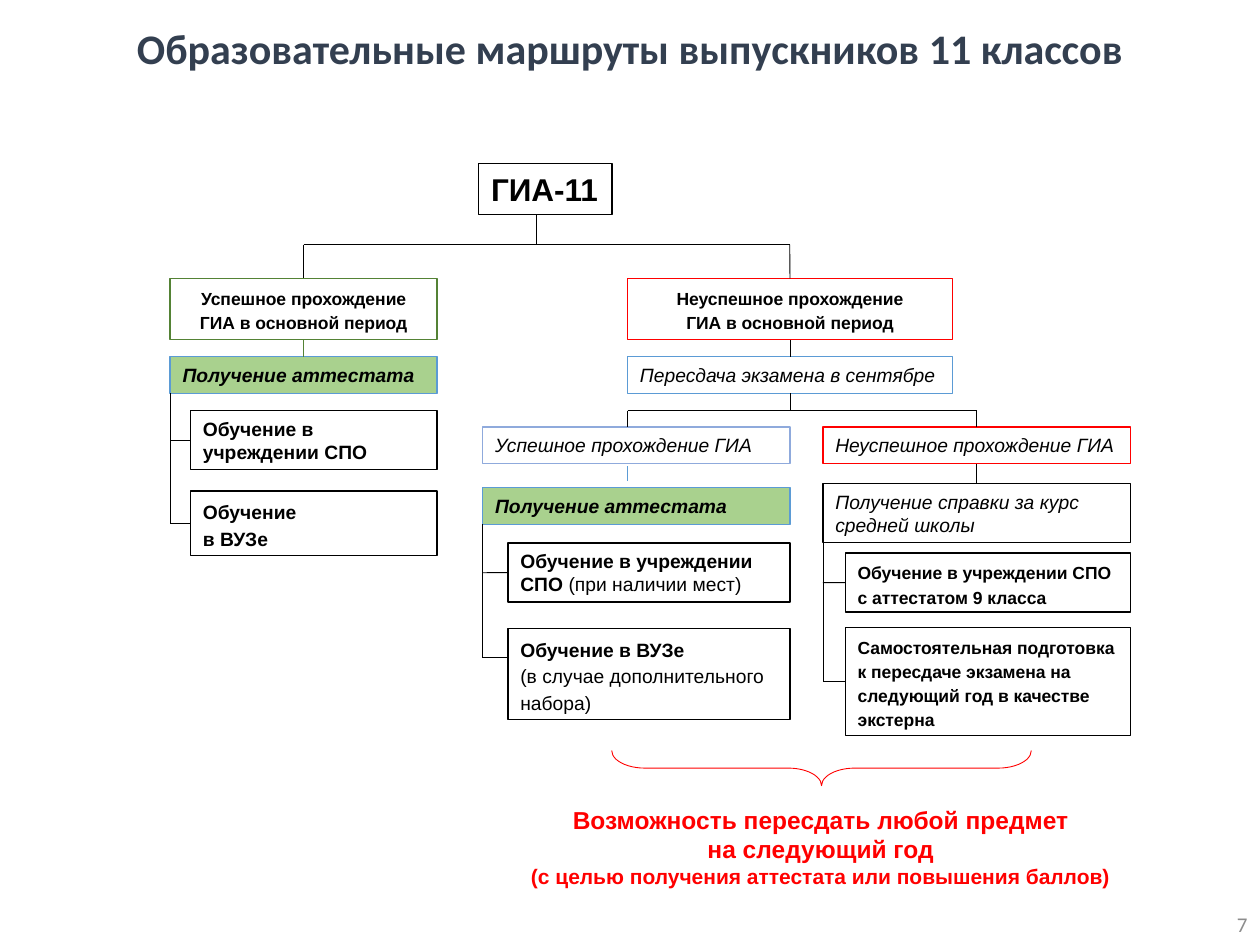
from dataclasses import dataclass

from lxml.etree import SubElement
from pptx import Presentation
from pptx.dml.color import RGBColor
from pptx.enum.shapes import MSO_CONNECTOR as Connector, MSO_SHAPE as Preset
from pptx.enum.text import MSO_ANCHOR as Anchor, MSO_AUTO_SIZE as AutoSize, PP_ALIGN as Align
from pptx.oxml.ns import qn
from pptx.util import Cm, Pt

BLACK = RGBColor(0x00, 0x00, 0x00)
RED = RGBColor(0xFF, 0x00, 0x00)
GREEN = RGBColor(0x54, 0x82, 0x35)
LIGHT_GREEN = RGBColor(0xA9, 0xD1, 0x8E)
BLUE = RGBColor(0x5B, 0x9B, 0xD5)
PALE_BLUE = RGBColor(0x8F, 0xAA, 0xDC)
SLATE = RGBColor(0x33, 0x3F, 0x50)
GREY = RGBColor(0x8C, 0x8C, 0x8C)

TOP, LEFT, BOTTOM = 0, 1, 2  # connection sites of a rectangle
HEAD_HEIGHT = 1.24
ROW_HEIGHT = 0.74
TWO_LINES = 1.19


@dataclass
class Box:
    """An area of the slide, in centimetres."""
    left: float
    top: float
    width: float
    height: float

    @property
    def center(self):
        return self.left + self.width / 2

    @property
    def middle(self):
        return self.top + self.height / 2

    @property
    def right(self):
        return self.left + self.width

    @property
    def bottom(self):
        return self.top + self.height

    def inner(self, dx, dy, width, height):
        return Box(self.left + dx, self.top + dy, width, height)

    def lengths(self):
        return Cm(self.left), Cm(self.top), Cm(self.width), Cm(self.height)


def write(shape, text, size, color=BLACK, font="Arial", bold=False, italic=False,
          align=Align.LEFT, spacing=None, anchor=Anchor.TOP, wrap=True):
    frame = shape.text_frame
    frame.text = text
    frame.word_wrap = wrap
    frame.vertical_anchor = anchor
    for para in frame.paragraphs:
        para.alignment = align
        if spacing:
            para.line_spacing = spacing
        for span in para.runs:
            span.font.name, span.font.size = font, Pt(size)
            span.font.bold, span.font.italic = bold, italic
            span.font.color.rgb = color


def add_node(page, box, text, line=BLACK, fill=None, size=11, **style):
    node = page.shapes.add_shape(Preset.RECTANGLE, *box.lengths())
    node.shadow.inherit = False
    node.line.color.rgb, node.line.width = line, Pt(0.75)
    if fill is None:
        node.fill.background()
    else:
        node.fill.solid()
        node.fill.fore_color.rgb = fill
    write(node, text, size, **style)
    node.text_frame.auto_size = AutoSize.SHAPE_TO_FIT_TEXT
    return node


def add_line(page, x1, y1, x2, y2, color=BLACK):
    line = page.shapes.add_connector(Connector.STRAIGHT, Cm(x1), Cm(y1), Cm(x2), Cm(y2))
    line.line.color.rgb, line.line.width = color, Pt(0.5)
    SubElement(line._element.spPr, qn("a:effectLst"))
    return line


def link(page, upper, lower, color=BLACK):
    """Join the bottom of one node to the top of the next."""
    line = add_line(page, 0, 0, 0, 0, color)
    line.begin_connect(upper, BOTTOM)
    line.end_connect(lower, TOP)


def add_spine(page, parent, children, last_tick=None):
    """Draw the line down from a parent's left corner with a tick to each child."""
    ticks = [box.middle for _, box in children]
    if last_tick is not None:
        ticks[-1] = last_tick
    add_line(page, parent.left, parent.bottom, parent.left, ticks[-1])
    for (node, box), y in zip(children, ticks):
        tick = add_line(page, box.left, y, parent.left, y)
        if y == box.middle:
            tick.begin_connect(node, LEFT)


def add_title(page, box):
    title = page.shapes.title
    title.left, title.top, title.width, title.height = box.lengths()
    write(title, "Образовательные маршруты выпускников 11 классов", 24, SLATE, "Calibri",
          bold=True, align=Align.CENTER, spacing=1.07)
    title.text_frame.auto_size = AutoSize.NONE


def add_root(page, box, success, failure):
    """Place the exam node and fork it to the two outcomes."""
    exam = box.inner(3.53, 0, 2.69, 1.02)
    add_node(page, exam, "ГИА-11", size=18, bold=True, wrap=False)
    bus = box.top + 1.63
    stem = box.left + 4.7
    add_line(page, box.left, bus, box.right, bus)
    add_line(page, stem, exam.bottom, stem, bus)
    for node, x in ((success, box.left), (failure, box.right)):
        add_line(page, x, bus, x, box.bottom).end_connect(node, TOP)


def add_main_success(page, box):
    head = add_node(page, box.inner(0, 0, box.width, HEAD_HEIGHT),
                    "Успешное прохождение ГИА в основной период", GREEN, size=10,
                    bold=True, align=Align.CENTER, spacing=1.15)
    certificate_box = box.inner(0, 1.58, box.width, ROW_HEIGHT)
    certificate = add_node(page, certificate_box, "Получение аттестата", BLUE, LIGHT_GREEN,
                           bold=True, italic=True)
    link(page, head, certificate, GREEN)
    college_box = box.inner(0.41, 2.67, box.width - 0.41, TWO_LINES)
    college = add_node(page, college_box, "Обучение в учреждении СПО", bold=True)
    university_box = box.inner(0.41, 4.29, box.width - 0.41, 1.3)
    university = add_node(page, university_box, "Обучение\nв ВУЗе", bold=True, spacing=1.15)
    add_spine(page, certificate_box, [(college, college_box), (university, university_box)])
    return head


def add_main_failure(page, box, resit_failure):
    """Place the failure and resit nodes and fork them to the resit outcomes."""
    head = add_node(page, box.inner(0, 0, box.width, HEAD_HEIGHT),
                    "Неуспешное прохождение\nГИА в основной период", RED, size=10,
                    bold=True, align=Align.CENTER, spacing=1.15)
    resit_box = box.inner(0, 1.58, box.width, ROW_HEIGHT)
    resit = add_node(page, resit_box, "Пересдача экзамена в сентябре", BLUE,
                     italic=True, wrap=False)
    link(page, head, resit)
    bus, fork_right = box.top + 2.67, box.left + 7.04
    add_line(page, box.left, bus, fork_right, bus)
    add_line(page, box.center, resit_box.bottom, box.center, bus).begin_connect(resit, BOTTOM)
    add_line(page, box.left, bus, box.left, box.bottom)
    add_line(page, fork_right, bus, fork_right, box.bottom).end_connect(resit_failure, TOP)
    return head


def add_resit_success(page, box):
    add_node(page, box.inner(0, 0, box.width, ROW_HEIGHT), "Успешное прохождение ГИА",
             PALE_BLUE, italic=True)
    certificate_box = box.inner(0, 1.22, box.width, ROW_HEIGHT)
    add_node(page, certificate_box, "Получение аттестата", BLUE, LIGHT_GREEN,
             bold=True, italic=True)
    stem = box.left + 2.92
    add_line(page, stem, box.top + 0.79, stem, box.top + 1.09, BLUE)
    college_box = box.inner(0.51, 2.34, box.width - 0.51, TWO_LINES)
    college = add_node(page, college_box, "Обучение в учреждении СПО ", bold=True)
    note = college.text_frame.paragraphs[0].add_run()
    note.text = "(при наличии мест)"
    note.font.name, note.font.size = "Arial", Pt(11)
    note.font.color.rgb = BLACK
    university_box = box.inner(0.51, 4.06, box.width - 0.51, 1.83)
    university = add_node(page, university_box,
                          "Обучение в ВУЗе\n(в случае дополнительного набора)",
                          bold=True, spacing=1.15)
    university.text_frame.paragraphs[1].runs[0].font.bold = False
    add_spine(page, certificate_box, [(college, college_box), (university, university_box)],
              last_tick=box.top + 4.65)


def add_resit_failure(page, box):
    head = add_node(page, box.inner(0, 0, box.width, ROW_HEIGHT), "Неуспешное прохождение ГИА",
                    RED, italic=True, wrap=False)
    record_box = box.inner(0, 1.14, box.width, TWO_LINES)
    record = add_node(page, record_box, "Получение справки за курс средней школы", italic=True)
    link(page, head, record)
    college_box = box.inner(0.45, 2.54, box.width - 0.45, TWO_LINES)
    college = add_node(page, college_box, "Обучение в учреждении СПО\nс аттестатом 9 класса",
                       size=10, bold=True, spacing=1.15)
    study_box = box.inner(0.45, 4.04, box.width - 0.45, 2.18)
    study = add_node(page, study_box, "Самостоятельная подготовка к пересдаче экзамена на "
                     "следующий год в качестве экстерна", size=10, bold=True, spacing=1.15)
    add_spine(page, record_box, [(college, college_box), (study, study_box)])
    return head


def add_conclusion(page, box):
    """Place the brace lying across the top and the red summary below it."""
    span = box.inner(2.25, 0, 8.46, 0.71)
    upright = Box(span.center - span.height / 2, span.middle - span.width / 2,
                  span.height, span.width)
    brace = page.shapes.add_shape(Preset.RIGHT_BRACE, *upright.lengths())
    brace.rotation = 90
    brace.adjustments[0], brace.adjustments[1] = 0.94, 0.5
    brace.shadow.inherit = False
    brace.fill.background()
    brace.line.color.rgb, brace.line.width = RED, Pt(0.5)
    summary = page.shapes.add_textbox(*box.inner(0, 0.97, box.width, 1.96).lengths())
    write(summary, "Возможность пересдать любой предмет\nна следующий год\n"
          "(с целью получения аттестата или повышения баллов)", 14, RED,
          bold=True, align=Align.CENTER)
    summary.text_frame.paragraphs[-1].runs[0].font.size = Pt(12)


def add_page_number(page, box):
    number = page.shapes.add_textbox(*box.lengths())
    write(number, "7", 12, GREY, "Calibri", align=Align.RIGHT, anchor=Anchor.MIDDLE)


def main():
    deck = Presentation()
    deck.slide_width, deck.slide_height = Cm(25.4), Cm(19.05)
    page = deck.slides.add_slide(deck.slide_layouts[5])
    add_title(page, Box(0, 0.25, 25.4, 1.3))
    success = add_main_success(page, Box(3.43, 5.61, 5.38, 5.59))
    add_resit_success(page, Box(9.73, 8.61, 6.2, 5.89))
    resit_failure = add_resit_failure(page, Box(16.59, 8.61, 6.2, 6.22))
    failure = add_main_failure(page, Box(12.65, 5.61, 6.55, 3), resit_failure)
    add_root(page, Box(6.12, 3.3, 9.8, 2.31), success, failure)
    add_conclusion(page, Box(10.08, 15.13, 12.93, 2.93))
    add_page_number(page, Box(19.69, 18.11, 5.71, 1.02))
    deck.save("out.pptx")


if __name__ == "__main__":
    main()
